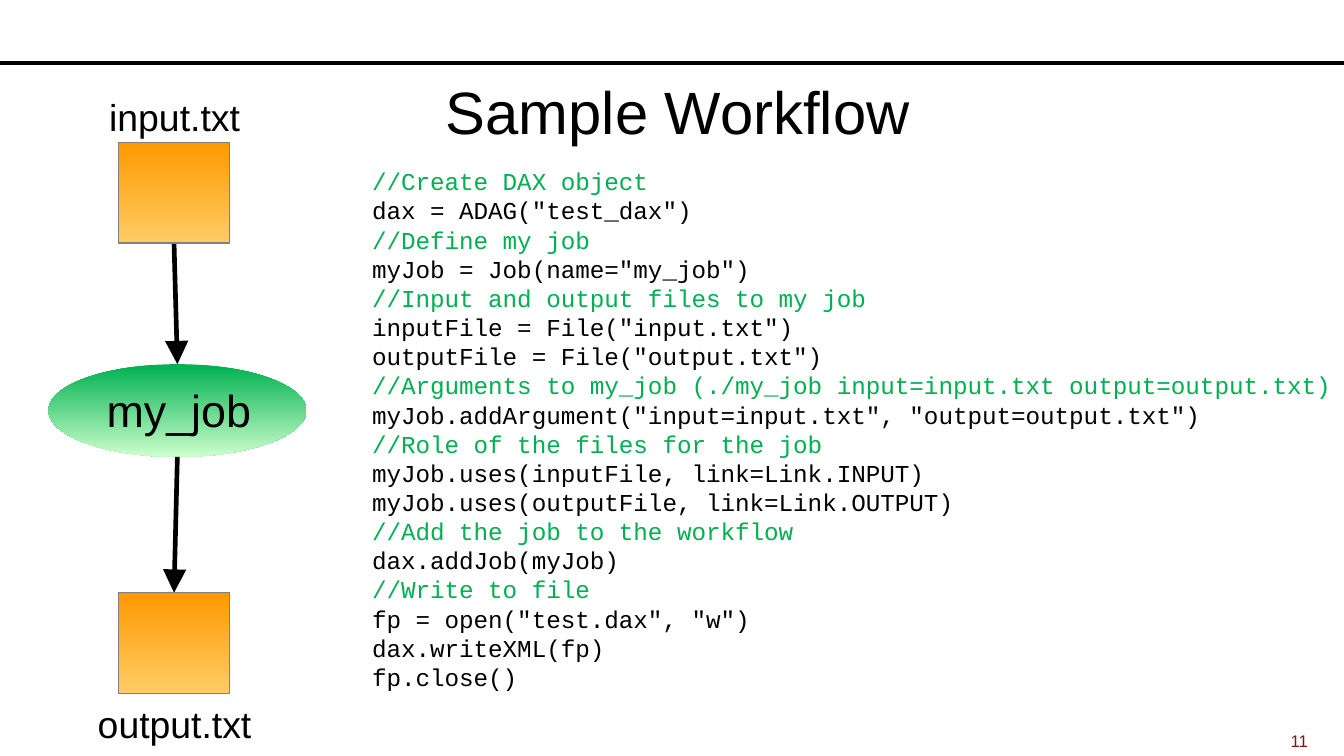
"""Build the sample workflow slide: a job diagram beside its code."""
from typing import NamedTuple

from lxml import etree
from pptx import Presentation
from pptx.dml.color import RGBColor
from pptx.enum.shapes import MSO_CONNECTOR, MSO_SHAPE
from pptx.enum.text import MSO_ANCHOR, PP_ALIGN
from pptx.oxml.ns import qn
from pptx.util import Inches, Pt

LINE = MSO_CONNECTOR.STRAIGHT
RECT, OVAL = MSO_SHAPE.RECTANGLE, MSO_SHAPE.OVAL
TOP, MIDDLE = MSO_ANCHOR.TOP, MSO_ANCHOR.MIDDLE
LEFT, CENTER, RIGHT = PP_ALIGN.LEFT, PP_ALIGN.CENTER, PP_ALIGN.RIGHT
BLACK, GREEN = "000000", "00B050"
WIDTH = 10
CODE = """//Create DAX object
dax = ADAG("test_dax")
//Define my job
myJob = Job(name="my_job")
//Input and output files to my job
inputFile = File("input.txt")
outputFile = File("output.txt")
//Arguments to my_job (./my_job input=input.txt output=output.txt)
myJob.addArgument("input=input.txt", "output=output.txt")
//Role of the files for the job
myJob.uses(inputFile, link=Link.INPUT)
myJob.uses(outputFile, link=Link.OUTPUT)
//Add the job to the workflow
dax.addJob(myJob)
//Write to file
fp = open("test.dax", "w")
dax.writeXML(fp)
fp.close()"""


class Box(NamedTuple):
    left: float
    top: float
    width: float
    height: float


class Node(NamedTuple):
    kind: MSO_SHAPE
    box: Box
    start: str
    end: str
    edge: str | None = None


INPUT = Node(RECT, Box(0.88, 1.06, 0.83, 0.75), "FF9900", "FFCC66", "808080")
OUTPUT = INPUT._replace(box=INPUT.box._replace(top=4.41))
JOB = Node(OVAL, Box(0.36, 2.71, 1.92, 0.69), GREEN, "CCFFCC")


def color(code: str) -> RGBColor:
    return RGBColor.from_string(code)


def add_text(slide, text: str, box: Box, *, size: float, font: str = "Arial",
             ink: str = BLACK, note: str = BLACK, align=CENTER, anchor=TOP,
             indent: float = 0):
    frame = slide.shapes.add_textbox(*map(Inches, box)).text_frame
    frame.word_wrap = True
    frame.vertical_anchor = anchor
    frame.text = text
    for para in frame.paragraphs:
        para.alignment = align
        if indent:
            props = para._p.get_or_add_pPr()
            props.set("marL", str(Inches(indent)))
            props.set("indent", str(Inches(-indent)))
        para.font.size = Pt(size)
        para.font.name = font
        para.font.color.rgb = color(note if para.text.startswith("//") else ink)


def add_node(slide, node: Node):
    shape = slide.shapes.add_shape(node.kind, *map(Inches, node.box))
    shape.shadow.inherit = False
    shape.fill.gradient()
    shape.fill.gradient_angle = 270
    for stop, place, code in zip(shape.fill.gradient_stops, (0, 1),
                                 (node.start, node.end)):
        stop.position = place
        stop.color.rgb = color(code)
    if node.edge:
        shape.line.color.rgb = color(node.edge)
        shape.line.width = Pt(0.75)
    else:
        shape.line.fill.background()
    return shape


def add_line(slide, x: float, y: float, to_x: float, to_y: float,
             width: float, arrow: bool = False):
    line = slide.shapes.add_connector(LINE, *map(Inches, (x, y, to_x, to_y)))
    line.line.color.rgb = color(BLACK)
    line.line.width = Pt(width)
    if arrow:
        etree.SubElement(line.line._get_or_add_ln(), qn("a:tailEnd"),
                         type="triangle", w="lg", len="lg")
    etree.SubElement(line._element.spPr, qn("a:effectLst"))
    return line


def main():
    deck = Presentation()
    deck.slide_width, deck.slide_height = Inches(WIDTH), Inches(WIDTH * 9 / 16)
    slide = deck.slides.add_slide(deck.slide_layouts[6])

    add_line(slide, 0, 0.47, WIDTH, 0.47, 2)
    add_text(slide, "Sample Workflow", Box(0.17, 0.5, 9.75, 0.65), size=32,
             anchor=MIDDLE)
    add_text(slide, "11", Box(8.75, 5.39, 1.08, 0.19), size=9, ink="82151A",
             align=RIGHT)

    job = add_node(slide, JOB)
    add_text(slide, "my_job", Box(0.33, 2.8, 2, 0.5), size=24)
    add_text(slide, "input.txt", Box(0.55, 0.65, 1.5, 0.44), size=20)
    add_text(slide, "output.txt", Box(0.3, 5.17, 2, 0.44), size=20)

    feed = add_line(slide, 1.3, 1.81, 1.32, 2.71, 2.5, arrow=True)
    result = add_line(slide, 1.32, 3.4, 1.3, 4.41, 2.5, arrow=True)
    feed.begin_connect(add_node(slide, INPUT), 2)
    feed.end_connect(job, 0)
    result.end_connect(add_node(slide, OUTPUT), 0)

    add_text(slide, CODE, Box(2.67, 1.19, 7.33, 4.46), size=13,
             font="Courier New", note=GREEN, align=LEFT, indent=0.38)
    deck.save("out.pptx")


if __name__ == "__main__":
    main()
